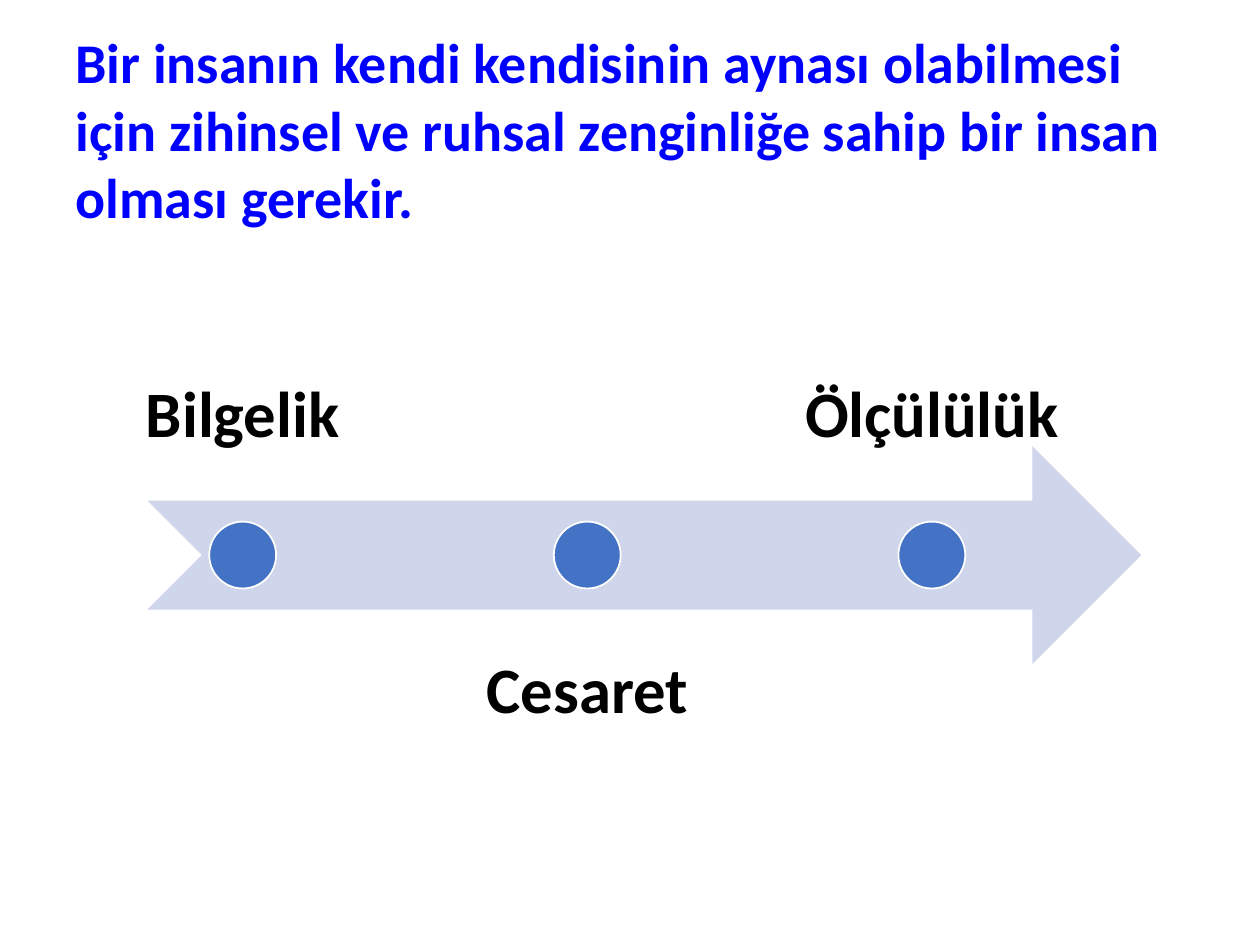
from pptx import Presentation
from pptx.dml.color import RGBColor
from pptx.enum.shapes import MSO_SHAPE
from pptx.enum.text import MSO_ANCHOR, MSO_AUTO_SIZE, PP_ALIGN
from pptx.util import Pt

ARROW, DOT = MSO_SHAPE.NOTCHED_RIGHT_ARROW, MSO_SHAPE.OVAL
TOP, MIDDLE, BOTTOM = MSO_ANCHOR.TOP, MSO_ANCHOR.MIDDLE, MSO_ANCHOR.BOTTOM
LEFT, CENTER = PP_ALIGN.LEFT, PP_ALIGN.CENTER
NO_AUTOFIT = MSO_AUTO_SIZE.NONE
TITLE_ONLY = 5


def rgb(value):
    return RGBColor.from_string(value)


class Deck:
    font = "Calibri"
    white, pale, accent = "FFFFFF", "CFD5EA", "4472C4"
    blue, black = "0000FF", "000000"

    def __init__(self, width, height):
        self.prs = Presentation()
        self.prs.slide_width, self.prs.slide_height = Pt(width), Pt(height)
        self.s = self.prs.slides.add_slide(self.prs.slide_layouts[TITLE_ONLY])

    def set_text(self, tf, text, size, color, align, anchor, inset=None):
        frame = {"word_wrap": True, "auto_size": NO_AUTOFIT, "vertical_anchor": anchor}
        if inset is not None:
            for side in ("left", "top", "right", "bottom"):
                frame[f"margin_{side}"] = Pt(inset)
        for name, value in frame.items():
            setattr(tf, name, value)
        p = tf.paragraphs[0]
        p.alignment = align
        r = p.add_run()
        r.text = text
        for name, value in {"name": self.font, "size": Pt(size), "bold": True}.items():
            setattr(r.font, name, value)
        r.font.color.rgb = rgb(color)
        return p

    def title(self, text, x, y, w, h):
        sp = self.s.shapes.title
        sp.left, sp.top, sp.width, sp.height = Pt(x), Pt(y), Pt(w), Pt(h)
        sp.fill.solid()
        sp.fill.fore_color.rgb = rgb(self.white)
        self.set_text(sp.text_frame, text, 32, self.blue, LEFT, MIDDLE)

    def shape(self, kind, x, y, w, h, fill, line=None):
        sp = self.s.shapes.add_shape(kind, Pt(x), Pt(y), Pt(w), Pt(h))
        sp.shadow.inherit = False
        sp.fill.solid()
        sp.fill.fore_color.rgb = rgb(fill)
        if line:
            sp.line.color.rgb = rgb(line)
            sp.line.width = Pt(1)
        else:
            sp.line.fill.background()

    def label(self, text, x, y, w, h, anchor):
        sp = self.s.shapes.add_textbox(Pt(x), Pt(y), Pt(w), Pt(h))
        p = self.set_text(sp.text_frame, text, 37, self.black, CENTER, anchor, inset=20.9)
        p.line_spacing = 0.9


def main():
    deck = Deck(720, 540)

    # Heading
    deck.title("Bir insanın kendi kendisinin aynası olabilmesi için zihinsel ve "
               "ruhsal zenginliğe sahip bir insan olması gerekir.", 36, 21, 636, 105)

    # Timeline arrow
    arrow_y, arrow_h = 254.9, 124.6
    deck.shape(ARROW, 84.2, arrow_y, 568, arrow_h, deck.pale)

    # Milestones, labelled above and below the arrow in turn
    dot, step, first_x = 38.2, 196.9, 138.7
    label_w, label_h = 187.2, 152.6
    mid_y = arrow_y + arrow_h / 2
    for i, text in enumerate(("Bilgelik", "Cesaret", "Ölçülülük")):
        x = first_x + i * step
        y, anchor = (355, TOP) if i % 2 else (126, BOTTOM)
        deck.label(text, x - label_w / 2, y, label_w, label_h, anchor)
        deck.shape(DOT, x - dot / 2, mid_y - dot / 2, dot, dot, deck.accent, deck.white)

    deck.prs.save("out.pptx")


if __name__ == "__main__":
    main()
